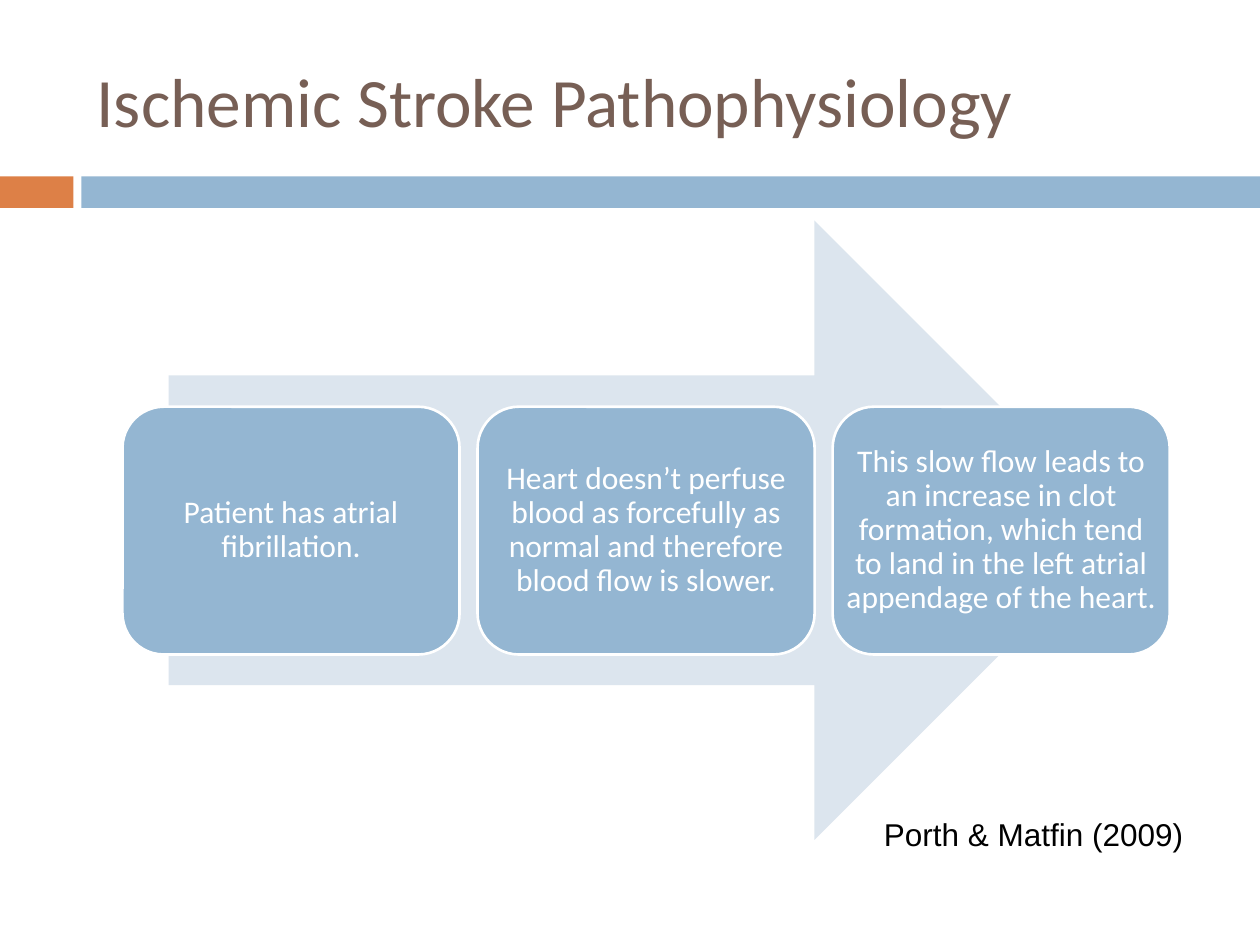
from pptx import Presentation
from pptx.dml.color import RGBColor
from pptx.enum import shapes, text
from pptx.util import Pt

BLUE, WHITE = "94B6D2", "FFFFFF"


def color(value):
    return RGBColor.from_string(value)


def add_block(page, kind, left, top, width, height, fill):
    block = page.shapes.add_shape(kind, Pt(left), Pt(top), Pt(width), Pt(height))
    block.shadow.inherit = False
    block.fill.solid()
    block.fill.fore_color.rgb = color(fill)
    block.line.fill.background()
    return block


deck = Presentation()
deck.slide_width, deck.slide_height = Pt(720), Pt(540)
page = deck.slides.add_slide(deck.slide_layouts[5])

# Header bars
add_block(page, shapes.MSO_SHAPE.RECTANGLE, 0, 100.8, 42, 18, "DD8047")
add_block(page, shapes.MSO_SHAPE.RECTANGLE, 46.5, 100.8, 673.5, 18, BLUE)

# Title
title = page.shapes.title
title.left, title.top, title.width, title.height = Pt(48), Pt(18), Pt(673), Pt(78)
title.text_frame.text = "Ischemic Stroke Pathophysiology"
title.text_frame.vertical_anchor = text.MSO_ANCHOR.MIDDLE
para = title.text_frame.paragraphs[0]
para.alignment = text.PP_ALIGN.LEFT
para.font.name, para.font.size = "Calibri", Pt(39.6)
para.font.color.rgb = color("775F55")

# Process arrow behind the steps
add_block(page, shapes.MSO_SHAPE.RIGHT_ARROW, 96.4, 126, 546, 354, "DCE5EE")

# Process steps
steps = [
    "Patient has atrial fibrillation.",
    "Heart doesn’t perfuse blood as forcefully as normal and therefore "
    "blood flow is slower.",
    "This slow flow leads to an increase in clot formation, which tend to land "
    "in the left atrial appendage of the heart.",
]
for index, step in enumerate(steps):
    box = add_block(page, shapes.MSO_SHAPE.ROUNDED_RECTANGLE,
                    70 + index * 202.9, 232.4, 192.6, 141.6, BLUE)
    box.line.color.rgb = color(WHITE)
    box.line.width = Pt(1.5)
    frame = box.text_frame
    frame.margin_left = frame.margin_right = frame.margin_top = frame.margin_bottom = 0
    frame.vertical_anchor = text.MSO_ANCHOR.MIDDLE
    frame.text = step
    para = frame.paragraphs[0]
    para.alignment = text.PP_ALIGN.CENTER
    para.line_spacing = 0.9
    para.font.name, para.font.size = "Calibri", Pt(18)
    para.font.color.rgb = color(WHITE)

# Citation
citation = page.shapes.add_textbox(Pt(498), Pt(462), Pt(204), Pt(29))
citation.text_frame.word_wrap = True
citation.text_frame.text = "Porth & Matfin (2009)"
para = citation.text_frame.paragraphs[0]
para.font.name, para.font.size = "Arial", Pt(18)
para.font.color.rgb = color("000000")

deck.save("out.pptx")
